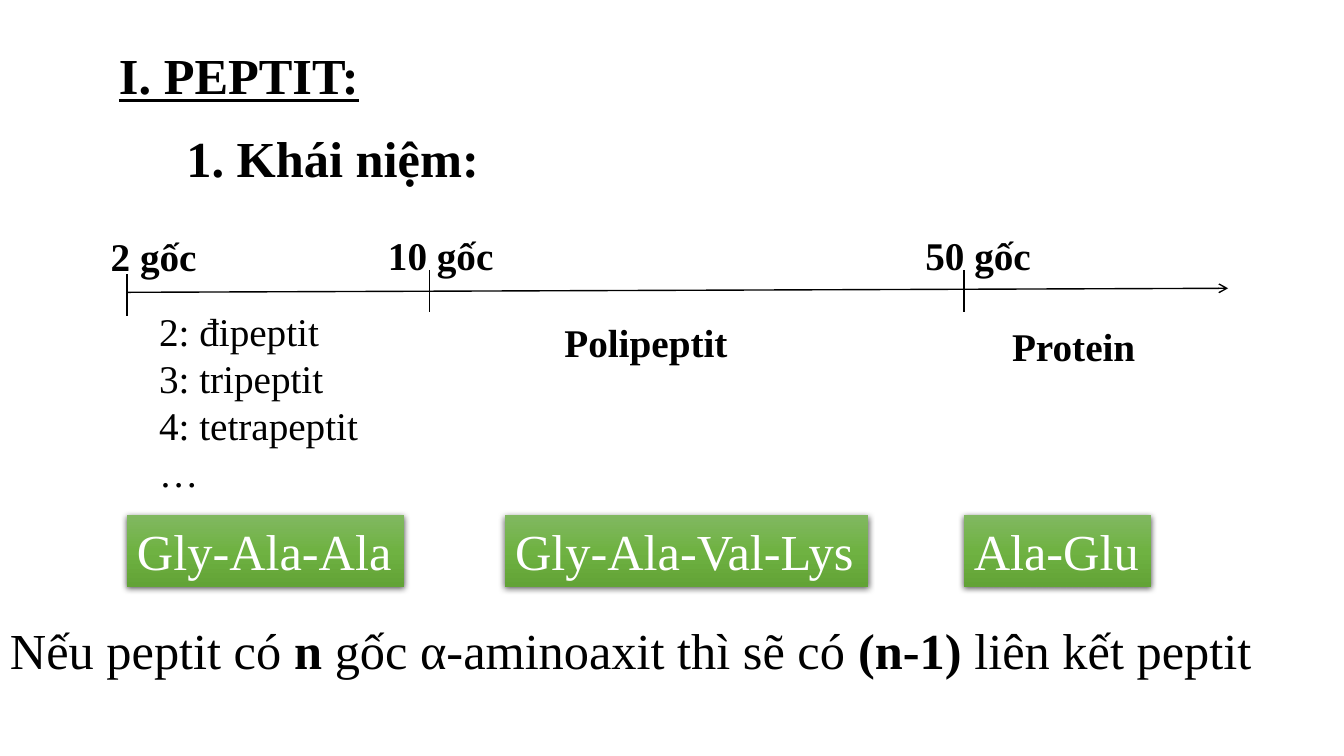
from copy import deepcopy
from lxml import etree
from pptx import Presentation
from pptx import util as u
from pptx.dml.color import RGBColor
from pptx.enum import shapes, text
from pptx.oxml.ns import qn


def color(code):
    return RGBColor.from_string(code)


class Page:
    """Style and drawing methods for the current slide."""

    font = "Times New Roman"
    ink = "000000"
    light = "FFFFFF"
    greens = ("81B861", "6FB242", "62A336")

    def __init__(self, deck):
        self.slide = deck.slides.add_slide(deck.slide_layouts[5])
        self.items = self.slide.shapes

    def letter(self, shape, lines, size, wrap=False, tint=ink, **style):
        frame = shape.text_frame
        form = dict(word_wrap=wrap, vertical_anchor=text.MSO_ANCHOR.TOP,
                    auto_size=text.MSO_AUTO_SIZE.SHAPE_TO_FIT_TEXT)
        for key, value in form.items():
            setattr(frame, key, value)
        for i, runs in enumerate(lines):
            para = frame.add_paragraph() if i else frame.paragraphs[0]
            para.alignment = text.PP_ALIGN.LEFT
            for words, bold in runs:
                run = para.add_run()
                run.text = words
                look = dict(name=self.font, size=u.Pt(size), bold=bold, **style)
                for key, value in look.items():
                    setattr(run.font, key, value)
                run.font.color.rgb = color(tint)

    def title(self, words, x, y, w, h):
        shape = self.items.title
        place = dict(left=x, top=y, width=w, height=h)
        for key, value in place.items():
            setattr(shape, key, u.Inches(value))
        self.letter(shape, [[(words, True)]], 36, underline=True)

    def label(self, lines, x, y, w, h, size=28, wrap=False):
        box = self.items.add_textbox(*map(u.Inches, (x, y, w, h)))
        self.letter(box, lines, size, wrap)

    def line(self, x1, y1, x2, y2, arrow=False):
        link = self.items.add_connector(
            shapes.MSO_CONNECTOR.STRAIGHT, *map(u.Inches, (x1, y1, x2, y2)))
        link.line.width = u.Pt(1)
        link.line.color.rgb = color(self.ink)
        props = link._element.spPr
        if arrow:
            etree.SubElement(props.find(qn("a:ln")), qn("a:tailEnd"), type="arrow")
        etree.SubElement(props, qn("a:effectLst"))

    def block(self, words, x, y, w, h):
        shape = self.items.add_shape(
            shapes.MSO_SHAPE.RECTANGLE, *map(u.Inches, (x, y, w, h)))
        shape.line.fill.background()
        self.shade(shape)
        self.glow(shape)
        self.letter(shape, [[(words, False)]], 36, tint=self.light)

    def shade(self, shape):
        fill = shape.fill
        fill.gradient()
        fill.gradient_angle = 270
        stops = shape._element.spPr.find(".//" + qn("a:gsLst"))
        stops.insert(1, deepcopy(stops[0]))
        for i, (stop, code) in enumerate(zip(fill.gradient_stops, self.greens)):
            stop.position = i / 2
            stop.color.rgb = color(code)

    def glow(self, shape):
        shape.shadow.inherit = False
        effects = shape._element.spPr.find(qn("a:effectLst"))
        cast = etree.SubElement(
            effects, qn("a:outerShdw"), blurRad=str(u.Pt(4.5)),
            dist=str(u.Pt(1.5)), dir="5400000", algn="ctr", rotWithShape="0")
        tone = etree.SubElement(cast, qn("a:srgbClr"), val=self.ink)
        etree.SubElement(tone, qn("a:alpha"), val="63000")


def main():
    deck = Presentation()
    deck.slide_width, deck.slide_height = u.Inches(13.33), u.Inches(7.5)
    page = Page(deck)
    page.title("I. PEPTIT:", 1.08, 0.39, 2.6, 0.71)
    page.label([[("1. Khái niệm:", True)]], 1.75, 1.21, 3.13, 0.71, 36)

    page.line(1.26, 2.9, 12.18, 2.86, arrow=True)
    for x, y in ((1.26, 2.72), (4.26, 2.68), (9.56, 2.68)):
        page.line(x, y, x, y + 0.42)

    for words, x, y, w in (
            ("2 gốc", 1, 2.26, 1.06), ("10 gốc", 3.75, 2.25, 1.26),
            ("50 gốc", 9.08, 2.25, 1.26), ("Polipeptit", 5.5, 3.11, 1.84),
            ("Protein", 9.94, 3.15, 1.44)):
        page.label([[(words, True)]], x, y, w, 0.57)

    names = ("2: đipeptit", "3: tripeptit", "4: tetrapeptit", "…")
    page.label([[(name, False)] for name in names], 1.48, 3, 2.63, 1.99, wrap=True)

    for words, x, w in (("Gly-Ala-Ala", 1.26, 2.75),
                        ("Gly-Ala-Val-Lys", 5.01, 3.6), ("Ala-Glu", 9.56, 1.86)):
        page.block(words, x, 5.11, w, 0.71)

    rule = [("Nếu peptit có ", False), ("n ", True),
            ("gốc α-aminoaxit thì sẽ có ", False), ("(n-1) ", True),
            ("liên kết peptit", False)]
    page.label([rule], 0, 6.09, 12.75, 0.71, 36, wrap=True)
    deck.save("out.pptx")


if __name__ == "__main__":
    main()
